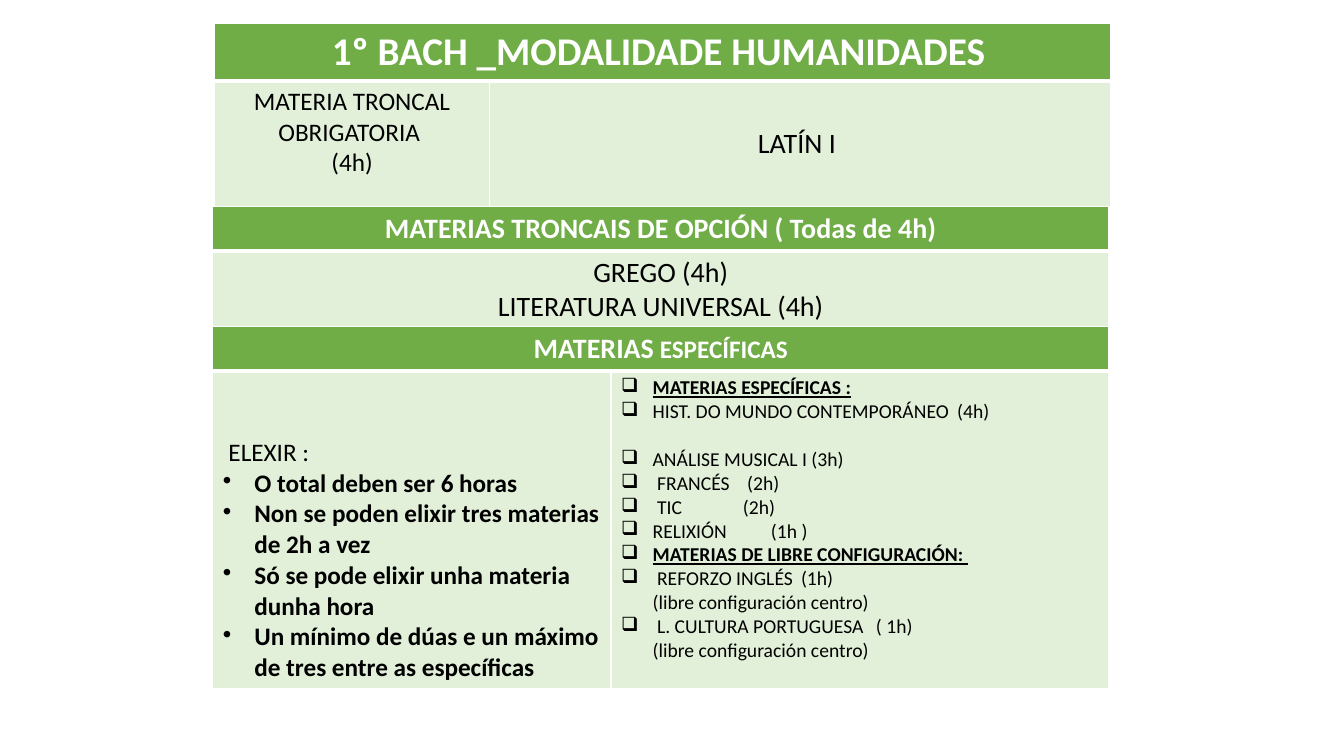
from dataclasses import dataclass

from lxml import etree
from pptx import Presentation
from pptx.dml.color import RGBColor
from pptx.enum import text
from pptx.oxml import ns
from pptx.util import Pt


@dataclass(frozen=True)
class Theme:
    font: str = "Calibri"
    green: str = "70AD47"
    pale: str = "E2F0D9"
    white: str = "FFFFFF"
    black: str = "000000"
    title: float = 28
    head: float = 20
    body: float = 18
    small: float = 14
    thin: float = 1
    thick: float = 3
    indent: float = 22.5


THEME = Theme()
MID, LEFT = text.PP_ALIGN.CENTER, text.PP_ALIGN.LEFT

RULES = [
    "O total deben ser 6 horas",
    "Non se poden elixir tres materias de 2h a vez",
    "Só se pode elixir unha materia dunha hora",
    "Un mínimo de dúas e un máximo de tres entre as específicas",
]
# Subject, tab stop of its hours, space before, kind of line
COURSES = [
    ("MATERIAS ESPECÍFICAS :", 0, 0, "head"),
    ("HIST. DO MUNDO CONTEMPORÁNEO\t(4h)", 240, 0, "item"),
    ("ANÁLISE MUSICAL I (3h)", 0, 17, "item"),
    (" FRANCÉS\t(2h)", 90, 0, "item"),
    (" TIC\t(2h)", 87, 0, "item"),
    ("RELIXIÓN\t(1h )", 107, 0, "item"),
    ("MATERIAS DE LIBRE CONFIGURACIÓN: ", 0, 0, "head"),
    (" REFORZO INGLÉS\t(1h)", 128.5, 0, "item"),
    ("(libre configuración centro)", 0, 0, "more"),
    (" L. CULTURA PORTUGUESA\t( 1h)", 182, 0, "item"),
    ("(libre configuración centro)", 0, 0, "more"),
]


def style(run, size, color=THEME.black, bold=False, under=False):
    font = run.font
    font.name, font.size, font.bold, font.underline = THEME.font, Pt(size), bold, under
    font.color.rgb = RGBColor.from_string(color)


def indent(para, mark="", stop=0):
    """Hang the paragraph, with a bullet and a tab stop where given."""
    props = para._p.get_or_add_pPr()
    props.set("marL", str(Pt(THEME.indent)))
    if mark:
        props.set("indent", str(-Pt(THEME.indent)))
        etree.SubElement(props, ns.qn("a:buChar"), char=mark)
    if stop:
        tabs = etree.SubElement(props, ns.qn("a:tabLst"))
        etree.SubElement(tabs, ns.qn("a:tab"), pos=str(Pt(stop)), algn="l")


def paint(cell, color, top, base):
    """Fill the cell and draw its white borders."""
    cell.fill.solid()
    cell.fill.fore_color.rgb = RGBColor.from_string(color)
    props = cell._tc.get_or_add_tcPr()
    sides = {"L": THEME.thin, "R": THEME.thin, "T": top, "B": base}
    for place, (side, width) in enumerate(sides.items()):
        line = etree.Element(ns.qn("a:ln" + side), w=str(Pt(width)))
        fill = etree.SubElement(line, ns.qn("a:solidFill"))
        etree.SubElement(fill, ns.qn("a:srgbClr"), val=THEME.white)
        props.insert(place, line)


def write(cell, lines, size, color=THEME.black, bold=False, align=MID):
    """Put one paragraph per line in the cell and return them."""
    cell.text_frame.text = "\n".join(lines)
    paras = cell.text_frame.paragraphs
    for para in paras:
        para.alignment = align
        for run in para.runs:
            style(run, size, color, bold)
    return paras


def panel(slide, box, cols, rows, title, size):
    """Add a table with a green header over pale cells."""
    left, top = box
    frame = slide.shapes.add_table(2, len(cols), Pt(left), Pt(top), Pt(sum(cols)), Pt(sum(rows)))
    table = frame.table
    table.horz_banding = False
    for col, width in zip(table.columns, cols):
        col.width = Pt(width)
    for row, height in zip(table.rows, rows):
        row.height = Pt(height)
    for col in range(len(cols)):
        paint(table.cell(0, col), THEME.green, THEME.thin, THEME.thick)
        paint(table.cell(1, col), THEME.pale, THEME.thick, THEME.thin)
    head = table.cell(0, 0)
    if len(cols) > 1:
        head.merge(table.cell(0, len(cols) - 1))
    write(head, [title], size, THEME.white, True)
    return table


def core(slide, box):
    table = panel(slide, box, (196, 444), (41.5, 89.5),
                  "1º BACH _MODALIDADE HUMANIDADES ", THEME.title)
    write(table.cell(1, 0), ["MATERIA TRONCAL OBRIGATORIA ", "(4h)"], THEME.body)
    latin = table.cell(1, 1)
    latin.vertical_anchor = text.MSO_ANCHOR.MIDDLE
    write(latin, ["LATÍN I "], THEME.head)


def option(slide, box):
    table = panel(slide, box, (640,), (31.5, 54.5),
                  "MATERIAS TRONCAIS DE OPCIÓN ( Todas de 4h)", THEME.head)
    write(table.cell(1, 0), ["GREGO (4h)", "LITERATURA UNIVERSAL (4h)"], THEME.head)


def choice(slide, box):
    table = panel(slide, box, (284.5, 355.5), (31.5, 226.5), "MATERIAS", THEME.head)
    run = table.cell(0, 0).text_frame.paragraphs[0].add_run()
    run.text = " ESPECÍFICAS"
    style(run, THEME.body, THEME.white, True)

    rules = table.cell(1, 0)
    rules.vertical_anchor = text.MSO_ANCHOR.BOTTOM
    intro, *paras = write(rules, ["ELEXIR :"] + RULES, THEME.body, align=LEFT)
    intro._p.get_or_add_pPr().set("marL", str(Pt(4)))
    for para in paras:
        indent(para, "•")
        para.runs[0].font.bold = True

    names = [course[0] for course in COURSES]
    paras = write(table.cell(1, 1), names, THEME.small, align=LEFT)
    for para, (_, stop, gap, kind) in zip(paras, COURSES):
        indent(para, "" if kind == "more" else "❑", stop)
        if gap:
            para.space_before = Pt(gap)
        if kind == "head":
            style(para.runs[0], THEME.small, bold=True, under=True)


def main():
    deck = Presentation()
    deck.slide_width, deck.slide_height = Pt(960), Pt(540)
    slide = deck.slides.add_slide(deck.slide_layouts[6])
    core(slide, (153.5, 16.5))
    option(slide, (152, 147.5))
    choice(slide, (152, 233.5))
    deck.save("out.pptx")


if __name__ == "__main__":
    main()
